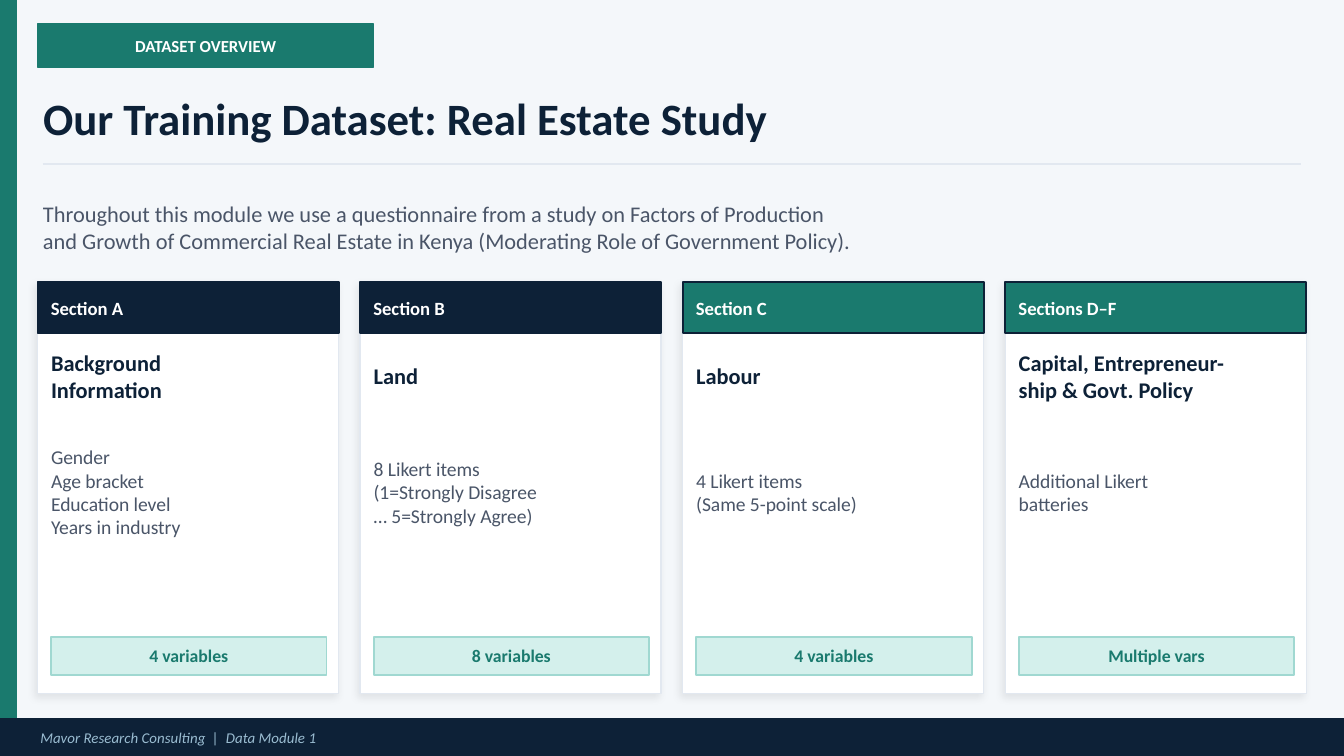
from lxml import etree
from pptx import Presentation
from pptx.dml.color import RGBColor
from pptx.enum.shapes import MSO_CONNECTOR, MSO_SHAPE
from pptx.enum.text import MSO_ANCHOR, MSO_AUTO_SIZE, PP_ALIGN
from pptx.oxml import parse_xml
from pptx.oxml.ns import nsdecls, qn
from pptx.util import Inches, Pt

RECTANGLE = MSO_SHAPE.RECTANGLE
STRAIGHT = MSO_CONNECTOR.STRAIGHT
MIDDLE = MSO_ANCHOR.MIDDLE
NO_AUTOFIT = MSO_AUTO_SIZE.NONE
LEFT, CENTER = PP_ALIGN.LEFT, PP_ALIGN.CENTER

FONT = "Calibri"
TEAL = RGBColor(0x1A, 0x7A, 0x6E)
NAVY = RGBColor(0x0D, 0x21, 0x37)
WHITE = RGBColor(0xFF, 0xFF, 0xFF)
SLATE = RGBColor(0x4A, 0x55, 0x68)
RULE_GREY = RGBColor(0xE2, 0xE8, 0xF0)
PAGE_GREY = RGBColor(0xF4, 0xF7, 0xFA)
FOOTER_BLUE = RGBColor(0x9A, 0xBC, 0xD1)
MINT = RGBColor(0xD4, 0xF0, 0xEC)
MINT_EDGE = RGBColor(0xA0, 0xD8, 0xD1)

PAGE_WIDTH = 10
PAGE_HEIGHT = PAGE_WIDTH * 9 / 16
CARD_LEFT, CARD_TOP, CARD_STEP = 0.28, 2.1, 2.4
CARD_WIDTH, CARD_HEIGHT = 2.24, 3.06
CARD_PADDING, CONTENT_WIDTH = 0.1, 2.05

CARDS = [
    ("Section A", NAVY, "Background\nInformation",
     "Gender\nAge bracket\nEducation level\nYears in industry", "4 variables"),
    ("Section B", NAVY, "Land",
     "8 Likert items\n(1=Strongly Disagree\n… 5=Strongly Agree)", "8 variables"),
    ("Section C", TEAL, "Labour",
     "4 Likert items\n(Same 5-point scale)", "4 variables"),
    ("Sections D–F", TEAL, "Capital, Entrepreneur-\nship & Govt. Policy",
     "Additional Likert\nbatteries", "Multiple vars"),
]


def write_text(shape, text, size, color, bold=False, italic=False,
               align=LEFT, indent=0):
    """Fill a shape with one paragraph per line of text, centred vertically."""
    frame = shape.text_frame
    frame.word_wrap = True
    frame.auto_size = NO_AUTOFIT
    frame.vertical_anchor = MIDDLE
    frame.margin_left = Inches(indent)
    frame.margin_top = frame.margin_right = frame.margin_bottom = 0
    frame.text = text
    for para in frame.paragraphs:
        para.alignment = align
        for span in para.runs:
            font = span.font
            font.name, font.size = FONT, Pt(size)
            font.bold, font.italic = bold, italic
            font.color.rgb = color


def add_text(page, text, left, top, width, height, **text_format):
    box = page.shapes.add_textbox(
        Inches(left), Inches(top), Inches(width), Inches(height))
    write_text(box, text, **text_format)


def add_panel(page, left, top, width, height, fill, edge=None, edge_width=1):
    panel = page.shapes.add_shape(
        RECTANGLE, Inches(left), Inches(top), Inches(width), Inches(height))
    panel.shadow.inherit = False
    panel.fill.solid()
    panel.fill.fore_color.rgb = fill
    panel.line.color.rgb = edge or fill
    panel.line.width = Pt(edge_width)
    return panel


def add_soft_shadow(panel):
    effects = panel._element.spPr.find(qn("a:effectLst"))
    effects.append(parse_xml(
        f'<a:outerShdw {nsdecls("a")} blurRad="{Pt(4)}" dist="{Pt(2)}" '
        f'dir="{135 * 60000}" algn="bl" rotWithShape="0">'
        '<a:srgbClr val="000000"><a:alpha val="8000"/></a:srgbClr>'
        '</a:outerShdw>'))


def add_rule(page, left, right, top):
    rule = page.shapes.add_connector(
        STRAIGHT, Inches(left), Inches(top), Inches(right), Inches(top))
    rule.line.color.rgb = RULE_GREY
    rule.line.width = Pt(0.75)
    etree.SubElement(rule._element.spPr, qn("a:effectLst"))


def add_title(page, text):
    title = page.shapes.title
    title.left, title.top = Inches(0.32), Inches(0.6)
    title.width, title.height = Inches(9.4), Inches(0.55)
    write_text(title, text, size=24, color=NAVY, bold=True)


def add_card(page, left, section, header_color, topic, details, count):
    card = add_panel(page, left, CARD_TOP, CARD_WIDTH, CARD_HEIGHT,
                     WHITE, RULE_GREY, 0.75)
    add_soft_shadow(card)
    header = add_panel(page, left, CARD_TOP, CARD_WIDTH, 0.38,
                       header_color, NAVY)
    write_text(header, section, size=10, color=WHITE, bold=True,
               indent=CARD_PADDING)
    inner = left + CARD_PADDING
    add_text(page, topic, inner, 2.52, CONTENT_WIDTH, 0.55,
             size=12, color=NAVY, bold=True)
    add_text(page, details, inner, 3.1, CONTENT_WIDTH, 1.12,
             size=10.5, color=SLATE)
    badge = add_panel(page, inner, 4.74, CONTENT_WIDTH, 0.28, MINT, MINT_EDGE)
    write_text(badge, count, size=9.5, color=TEAL, bold=True, align=CENTER)


def main():
    deck = Presentation()
    deck.slide_width = Inches(PAGE_WIDTH)
    deck.slide_height = Inches(PAGE_HEIGHT)
    page = deck.slides.add_slide(deck.slide_layouts.get_by_name("Title Only"))
    page.background.fill.solid()
    page.background.fill.fore_color.rgb = PAGE_GREY

    add_panel(page, 0, 0, 0.12, PAGE_HEIGHT, TEAL)
    tag = add_panel(page, 0.28, 0.18, 2.5, 0.32, TEAL)
    write_text(tag, "DATASET OVERVIEW", size=9, color=WHITE, bold=True,
               align=CENTER)
    add_title(page, "Our Training Dataset: Real Estate Study")
    add_rule(page, 0.32, 9.68, 1.22)
    footer = add_panel(page, 0, 5.35, PAGE_WIDTH, 0.28, NAVY)
    write_text(footer, "Mavor Research Consulting  |  Data Module 1",
               size=8, color=FOOTER_BLUE, italic=True, indent=0.3)
    add_text(page,
             "Throughout this module we use a questionnaire from a study on "
             "Factors of Production\n"
             "and Growth of Commercial Real Estate in Kenya "
             "(Moderating Role of Government Policy).",
             0.32, 1.35, 9.4, 0.68, size=12, color=SLATE)
    for index, card in enumerate(CARDS):
        add_card(page, CARD_LEFT + index * CARD_STEP, *card)

    deck.save("out.pptx")


if __name__ == "__main__":
    main()
